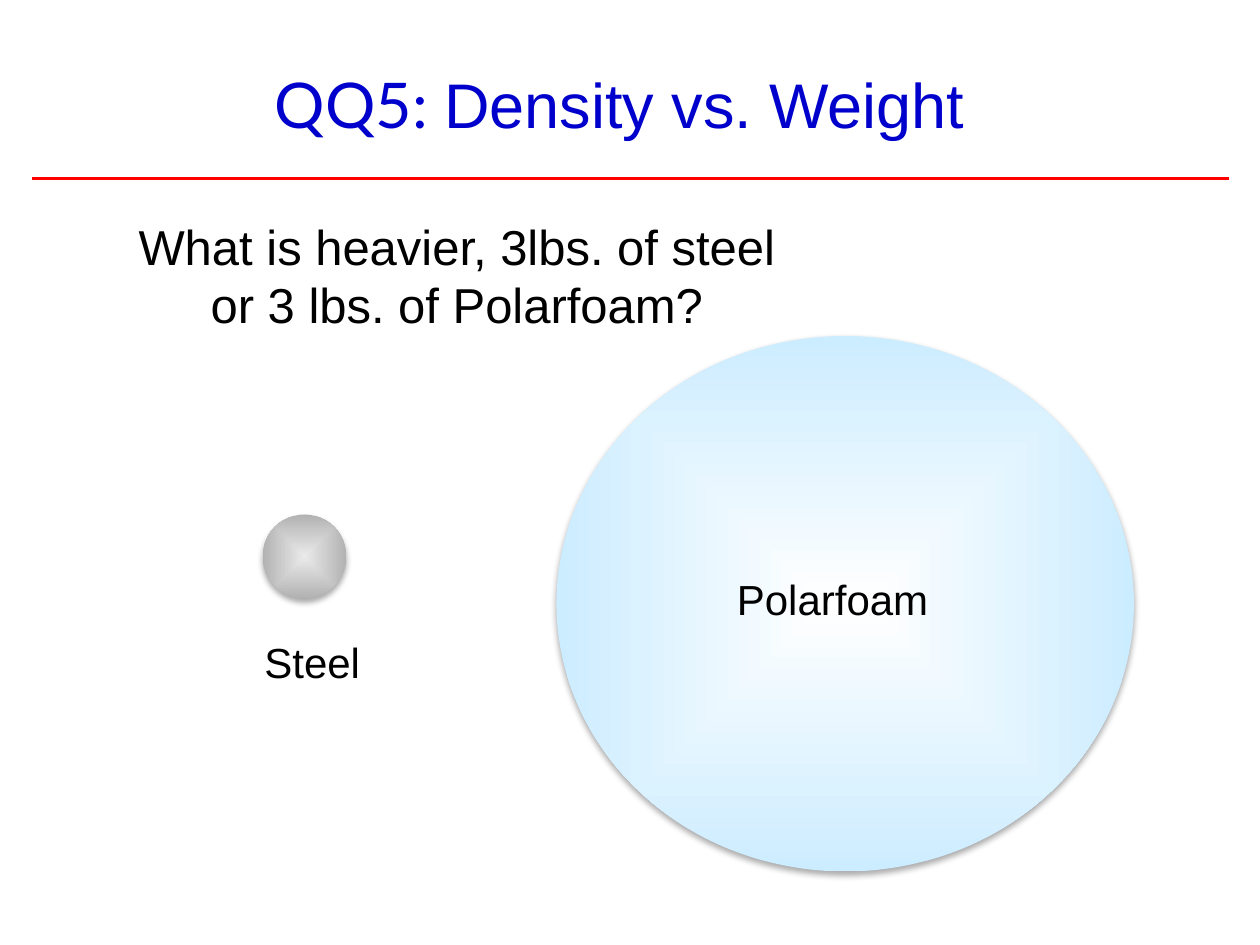
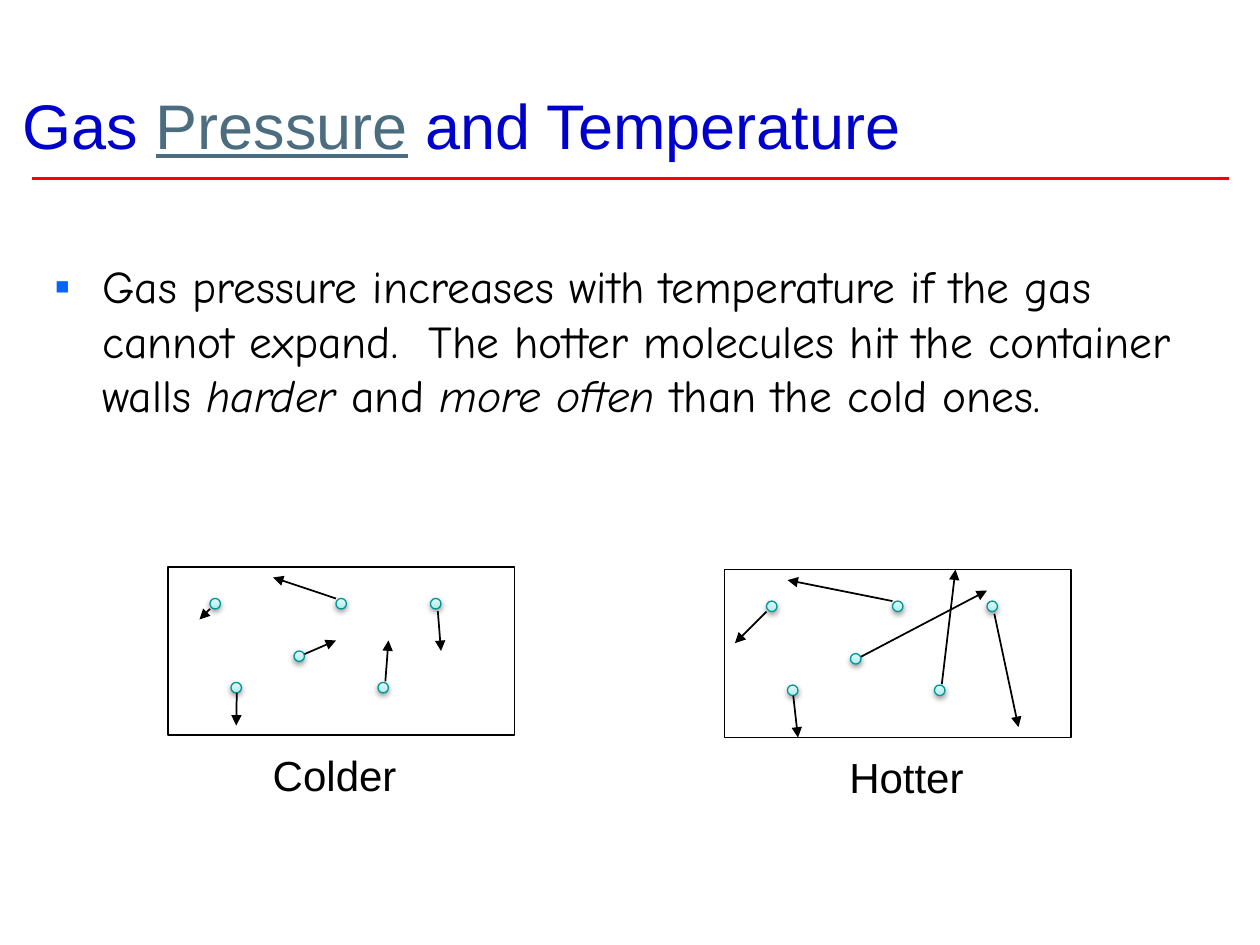
from lxml import etree
from pptx import Presentation
from pptx.dml.color import RGBColor
from pptx.enum.shapes import MSO_CONNECTOR, MSO_SHAPE
from pptx.enum.text import MSO_ANCHOR, PP_ALIGN
from pptx.oxml.ns import qn
from pptx.util import Inches, Pt

OVAL, BOX = MSO_SHAPE.OVAL, MSO_SHAPE.RECTANGLE
STRAIGHT = MSO_CONNECTOR.STRAIGHT
BOTTOM = MSO_ANCHOR.BOTTOM
CENTER = PP_ALIGN.CENTER

BLACK = RGBColor(0x00, 0x00, 0x00)
RED = RGBColor(0xFF, 0x00, 0x00)
TITLE_BLUE = RGBColor(0x00, 0x00, 0xCC)
TERM_GREY = RGBColor(0x4C, 0x6D, 0x80)
BULLET_BLUE = RGBColor(0x00, 0x66, 0xFF)
TEAL = RGBColor(0x00, 0x96, 0x96)
WHITE = RGBColor(0xFF, 0xFF, 0xFF)
FOAM_BLUE = RGBColor(0xCC, 0xEC, 0xFF)
STEEL_LIGHT = RGBColor(0xEA, 0xEA, 0xEA)
STEEL_DARK = RGBColor(0xB2, 0xB2, 0xB2)
GAS_STOPS = [(0, RGBColor(0xA5, 0xEB, 0xEB)),
             (35, RGBColor(0xC1, 0xF0, 0xF0)),
             (100, RGBColor(0xE7, 0xFA, 0xFA))]

COLUMNS, ROWS = 120, 90  # square grid cells, twelve to the inch

TITLE = {"size": Pt(36), "name": "Arial", "color": TITLE_BLUE}
LABEL = {"size": Pt(24), "name": "Arial", "color": BLACK}
QUESTION = {**LABEL, "size": Pt(28)}
BODY = {"size": Pt(26), "name": "Comic Neue", "color": BLACK}

# opacity in percent, blur and distance in points
BALL_SHADOW = (32, 3.5, 2.2)
MOLECULE_SHADOW = (38, 3.15, 1.57)


def add_xml(parent, tag, **attributes):
    return etree.SubElement(parent, qn(tag), {k: str(v) for k, v in attributes.items()})


class LessonDeck:
    def __init__(self):
        self.presentation = Presentation()
        self.presentation.slide_width = Inches(10)
        self.presentation.slide_height = Inches(7.5)
        self.slide = None

    def x(self, column):
        return round(self.presentation.slide_width * column / COLUMNS)

    def y(self, row):
        return round(self.presentation.slide_height * row / ROWS)

    def place(self, column, row, width, height):
        return self.x(column), self.y(row), self.x(width), self.y(height)

    def new_slide(self, title_place, title_runs):
        layout = self.presentation.slide_layouts[6]
        self.slide = self.presentation.slides.add_slide(layout)
        self.line((3, 17), (117, 17), RED, 1.5)
        self.text(title_place, title_runs, TITLE, anchor=BOTTOM)

    def text(self, place, runs, style, wrap=True, anchor=None, align=None, bullet=None):
        """Each run is a pair: its words and what differs from the style."""
        frame = self.slide.shapes.add_textbox(*self.place(*place)).text_frame
        frame.word_wrap = wrap
        if anchor is not None:
            frame.vertical_anchor = anchor
        paragraph = frame.paragraphs[0]
        if align is not None:
            paragraph.alignment = align
        if bullet:
            self.bullet(paragraph, bullet)
        for words, changes in runs:
            run = paragraph.add_run()
            run.text = words
            for key, value in {**style, **changes}.items():
                if key == "color":
                    run.font.color.rgb = value
                else:
                    setattr(run.font, key, value)

    def bullet(self, paragraph, mark):
        properties = paragraph._p.get_or_add_pPr()
        indent = Inches(0.38)
        properties.set("marL", str(indent))
        properties.set("indent", str(-indent))
        add_xml(add_xml(properties, "a:buClr"), "a:srgbClr", val=BULLET_BLUE)
        add_xml(properties, "a:buFont", typeface="Arial")
        add_xml(properties, "a:buChar", char=mark)

    def label(self, place, words):
        self.text(place, [(words, {})], LABEL, wrap=False)

    def line(self, start, end, color, weight, arrow=False):
        connector = self.slide.shapes.add_connector(
            STRAIGHT, self.x(start[0]), self.y(start[1]), self.x(end[0]), self.y(end[1]))
        connector.line.color.rgb = color
        connector.line.width = Pt(weight)
        if arrow:
            add_xml(connector.line._get_or_add_ln(), "a:tailEnd", type="triangle")
        add_xml(connector._element.spPr, "a:effectLst")

    def outline(self, kind, place, color=None, weight=1):
        shape = self.slide.shapes.add_shape(kind, *self.place(*place))
        shape.shadow.inherit = False
        shape.fill.background()
        if color is None:
            shape.line.fill.background()
        else:
            shape.line.color.rgb = color
            shape.line.width = Pt(weight)
        return shape

    def ball(self, place, stops, shadow, radial=True, edge=None):
        """Shaded disc; the shading runs from its centre, or upwards."""
        properties = self.outline(OVAL, place, edge, 0.75)._element.spPr
        gradient = etree.Element(qn("a:gradFill"), rotWithShape="1")
        stop_list = add_xml(gradient, "a:gsLst")
        for percent, color in stops:
            stop = add_xml(stop_list, "a:gs", pos=percent * 1000)
            add_xml(stop, "a:srgbClr", val=color)
        if radial:
            middle = dict.fromkeys("ltrb", 50000)
            add_xml(add_xml(gradient, "a:path", path="shape"), "a:fillToRect", **middle)
        else:
            add_xml(gradient, "a:lin", ang=270 * 60000, scaled=0)
        properties.replace(properties.find(qn("a:noFill")), gradient)

        opacity, blur, distance = shadow
        cast = add_xml(properties.find(qn("a:effectLst")), "a:outerShdw",
                       blurRad=Pt(blur), dist=Pt(distance), dir=90 * 60000, rotWithShape=0)
        add_xml(add_xml(cast, "a:srgbClr", val=BLACK), "a:alpha", val=opacity * 1000)

    def gas_container(self, corner, caption, caption_place, arrow_tips):
        """Molecules start alike in every container; only the arrow tips differ."""
        def inside(point):
            return corner[0] + point[0], corner[1] + point[1]

        caption_start, caption_width = caption_place
        self.label((*inside((caption_start, 16.78)), caption_width, 6), caption)
        self.outline(BOX, (*corner, 33, 16), BLACK)
        for molecule in MOLECULES:
            self.ball((*inside(molecule), 1, 1), GAS_STOPS, MOLECULE_SHADOW,
                      radial=False, edge=TEAL)
        for start, tip in zip(ARROW_STARTS, arrow_tips):
            self.line(inside(start), inside(tip), BLACK, 1, arrow=True)


MOLECULES = [(4, 3), (16, 3), (6, 11), (12, 8), (20, 11), (25, 3)]
ARROW_STARTS = [(4, 4), (16, 3), (6.55, 12), (13, 8.3), (20.7, 10.9), (25.7, 4.2)]
COLD_TIPS = [(3, 5), (10, 1), (6.5, 15.1), (16, 7), (21, 7), (26, 8)]
HOT_TIPS = [(1, 7), (6, 1), (7, 16), (25, 2), (22, 0), (28, 15)]


def density_slide(deck):
    deck.new_slide((25, 4, 84, 10),
                   [("QQ5: ", {"name": "Lato"}), ("Density vs. Weight", {})])
    deck.ball((53, 32, 55, 51), [(0, WHITE), (100, FOAM_BLUE)], BALL_SHADOW)
    deck.label((69, 54, 20.7, 6), "Polarfoam")
    deck.ball((25, 49, 8, 8), [(0, STEEL_LIGHT), (100, STEEL_DARK)], BALL_SHADOW)
    deck.label((24, 60, 11.6, 6), "Steel")
    deck.text((12, 20, 63, 12.5),
              [("What is heavier, 3lbs. of steel or 3 lbs. of Polarfoam?", {})],
              QUESTION, align=CENTER)


def pressure_slide(deck):
    deck.new_slide((1, 0, 118, 16),
                   [("Gas ", {}),
                    ("Pressure", {"color": TERM_GREY, "underline": True}),
                    (" and Temperature", {})])
    stressed = {"italic": True}
    deck.text((4, 24, 110, 29),
              [("Gas pressure increases with temperature if the gas cannot expand.  "
                "The hotter molecules hit the container walls ", {}),
               ("harder", stressed), (" and ", {}), ("more often", stressed),
               (" than the cold ones.", {})],
              BODY, bullet="▪")
    deck.gas_container((16, 54), "Colder", (8.8, 14.2), COLD_TIPS)
    deck.gas_container((69, 54.25), "Hotter", (10.7, 13.3), HOT_TIPS)


def main():
    deck = LessonDeck()
    density_slide(deck)
    pressure_slide(deck)
    deck.presentation.save("out.pptx")


if __name__ == "__main__":
    main()
